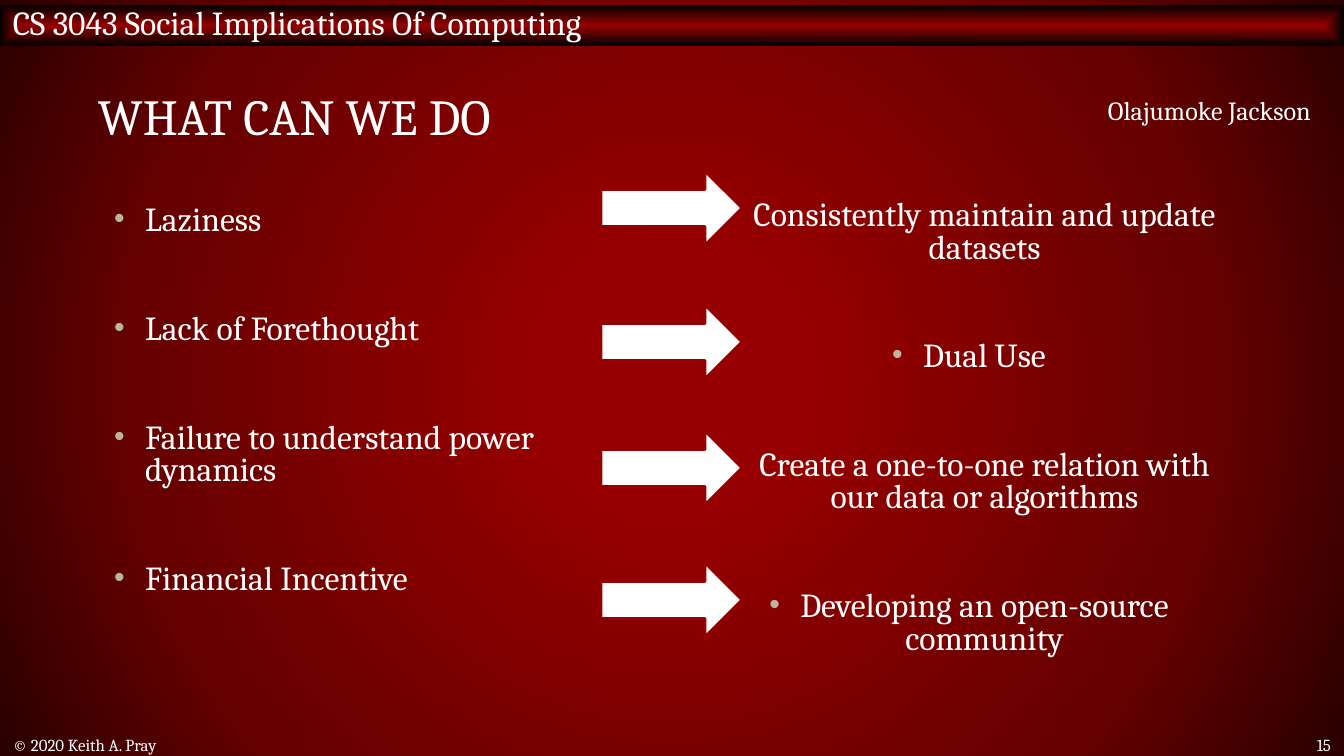
from lxml import etree
from pptx import Presentation
from pptx.dml.color import RGBColor
from pptx.enum.shapes import MSO_SHAPE
from pptx.enum.text import MSO_ANCHOR, PP_ALIGN
from pptx.oxml.ns import qn
from pptx.util import Emu, Pt

RECTANGLE, RIGHT_ARROW = MSO_SHAPE.RECTANGLE, MSO_SHAPE.RIGHT_ARROW
TOP, MIDDLE = MSO_ANCHOR.TOP, MSO_ANCHOR.MIDDLE
LEFT, CENTER, RIGHT = PP_ALIGN.LEFT, PP_ALIGN.CENTER, PP_ALIGN.RIGHT

WHITE = RGBColor(0xFF, 0xFF, 0xFF)
BLACK = RGBColor(0x00, 0x00, 0x00)
RED = RGBColor(0x96, 0x00, 0x00)
DARK_RED = RGBColor(0x65, 0x00, 0x00)
DEEP_RED = RGBColor(0x29, 0x00, 0x00)
BULLET_COLOR = RGBColor(0xBC, 0xB4, 0x9E)

FONT = "Cambria"
SLIDE_W, SLIDE_H = 1344, 756
PX = 12192000 / 1792
HANGING = 31

PROBLEMS = [
    "Laziness",
    "Lack of Forethought",
    "Failure to understand power dynamics",
    "Financial Incentive",
]
REMEDIES = [
    "Consistently maintain and update datasets",
    "Dual Use",
    "Create a one-to-one relation with our data or algorithms",
    "Developing an open-source community",
]
ARROW_TOPS = [0, 134, 260, 392]


def px(length):
    return Emu(round(length * PX))


def fill_path_gradient(fill, owner, path, stops):
    """Fill with a gradient that spreads from the centre; owner holds its XML."""
    fill.gradient()
    gradient = owner.find(".//" + qn("a:gradFill"))
    gradient.clear()
    stop_list = etree.SubElement(gradient, qn("a:gsLst"))
    for percent, color in stops:
        stop = etree.SubElement(stop_list, qn("a:gs"), pos=str(percent * 1000))
        etree.SubElement(stop, qn("a:srgbClr"), val=str(color))
    spread = etree.SubElement(gradient, qn("a:path"), path=path)
    etree.SubElement(spread, qn("a:fillToRect"), l="50000", t="50000", r="50000", b="50000")


def format_frame(frame, anchor, top=7, bottom=7):
    frame.word_wrap = True
    frame.vertical_anchor = anchor
    frame.margin_left = frame.margin_right = px(13)
    frame.margin_top, frame.margin_bottom = px(top), px(bottom)


def add_run(paragraph, text, size, align=LEFT):
    paragraph.alignment = align
    run = paragraph.add_run()
    run.text = text
    run.font.name = FONT
    run.font.size = Pt(size)
    run.font.color.rgb = WHITE


def add_bullet(paragraph):
    properties = paragraph._p.get_or_add_pPr()
    properties.set("marL", str(px(HANGING)))
    properties.set("indent", str(-px(HANGING)))
    color = etree.SubElement(properties, qn("a:buClr"))
    etree.SubElement(color, qn("a:srgbClr"), val=str(BULLET_COLOR))
    etree.SubElement(properties, qn("a:buSzPct"), val="90000")
    etree.SubElement(properties, qn("a:buFont"), typeface="Arial")
    etree.SubElement(properties, qn("a:buChar"), char="•")


def add_course_bar(slide, x, y, w, h):
    bar = slide.shapes.add_shape(RECTANGLE, px(x), px(y), px(w), px(h))
    bar.shadow.inherit = False
    bar.line.fill.background()
    fill_path_gradient(bar.fill, bar._element, "rect", [(0, RED), (100, BLACK)])
    format_frame(bar.text_frame, MIDDLE, 0, 7)
    add_run(bar.text_frame.paragraphs[0], "CS 3043 Social Implications Of Computing", 18)


def place_title(slide, x, y, w, h):
    title = slide.shapes.title
    title.left, title.top, title.width, title.height = px(x), px(y), px(w), px(h)
    format_frame(title.text_frame, MIDDLE)
    paragraph = title.text_frame.paragraphs[0]
    paragraph.line_spacing = 0.8
    add_run(paragraph, "WHAT CAN WE DO", 27)


def add_label(slide, x, y, w, h, text, size, align=LEFT):
    label = slide.shapes.add_textbox(px(x), px(y), px(w), px(h))
    format_frame(label.text_frame, MIDDLE)
    add_run(label.text_frame.paragraphs[0], text, size, align)


def add_bullet_column(slide, x, y, w, h, points, align, top_inset):
    column = slide.shapes.add_textbox(px(x), px(y), px(w), px(h))
    frame = column.text_frame
    format_frame(frame, TOP, top_inset)
    for index, point in enumerate(points):
        paragraph = frame.add_paragraph() if index else frame.paragraphs[0]
        add_bullet(paragraph)
        paragraph.line_spacing = 0.8
        if index:
            paragraph.space_before = Pt(41)
        add_run(paragraph, point, 18, align)


def add_arrows(slide, x, y, w, h):
    for top in ARROW_TOPS:
        arrow = slide.shapes.add_shape(RIGHT_ARROW, px(x), px(y + top), px(w), px(h))
        arrow.shadow.inherit = False
        arrow.fill.solid()
        arrow.fill.fore_color.rgb = WHITE
        arrow.line.color.rgb = RED
        arrow.line.width = Pt(1.5)


def add_footer(slide, x, y, w, h):
    number_w = 91
    add_label(slide, x, y, 817, h, "© 2020 Keith A. Pray", 9)
    add_label(slide, x + w - number_w, y, number_w, h, "15", 9, RIGHT)


def main():
    presentation = Presentation()
    presentation.slide_width, presentation.slide_height = px(SLIDE_W), px(SLIDE_H)
    slide = presentation.slides.add_slide(presentation.slide_layouts[5])
    fill_path_gradient(slide.background.fill, slide._element, "circle",
                       [(17, RED), (71, DARK_RED), (100, DEEP_RED)])

    add_course_bar(slide, 0, 5, SLIDE_W, 41)
    place_title(slide, 85, 54, 1159, 134)
    add_bullet_column(slide, 101, 199, 548, 493, PROBLEMS, LEFT, 7)
    add_bullet_column(slide, 695, 199, 548, 493, REMEDIES, CENTER, 2)
    add_footer(slide, 0, 734, SLIDE_W, 22)
    add_label(slide, 1004, 87, 320, 46, "Olajumoke Jackson", 14, RIGHT)
    add_arrows(slide, 601, 171, 141, 74)
    presentation.save("out.pptx")


if __name__ == "__main__":
    main()
